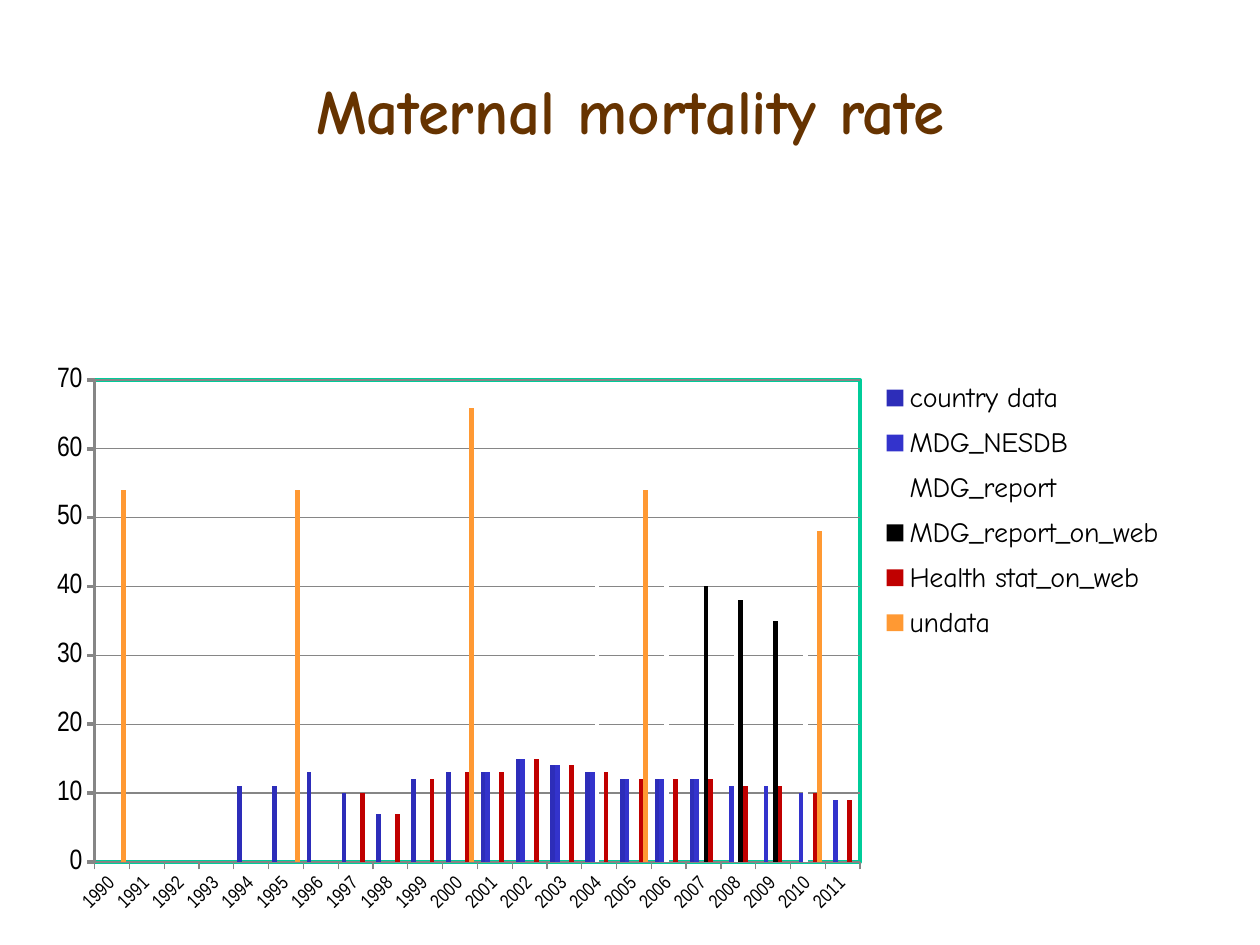
"""Build a slide charting maternal mortality rates from six sources."""
from dataclasses import dataclass

from lxml import etree
from pptx import Presentation
from pptx import util as u
from pptx.chart.data import CategoryChartData
from pptx.dml.color import RGBColor
from pptx.enum import chart as ch, text
from pptx.oxml import parse_xml
from pptx.oxml.ns import nsdecls, qn

SCALE = 914400 / 126
YEARS = range(1990, 2012)
COLORS = {"title": "663300", "ink": "000000", "grid": "868686", "frame": "00CC99",
          "plot": "FFFFFF", "country": "2D2DB9", "nesdb": "3333CC", "report": "FFFFFF",
          "web": "000000", "health": "C00000", "un": "FF9933"}


@dataclass
class Source:
    """One data source, its values running at a fixed step from a first year."""
    name: str
    color: str
    first: int
    rates: list[int]
    step: int = 1

    def by_year(self) -> list[int | None]:
        """Return one value or gap for every year."""
        known = {self.first + i * self.step: rate for i, rate in enumerate(self.rates)}
        return [known.get(year) for year in YEARS]


SOURCES = [
    Source("country data", "country", 1994,
           [11, 11, 13, 10, 7, 12, 13, 13, 15, 14, 13, 12, 12, 12]),
    Source("MDG_NESDB", "nesdb", 2001, [13, 15, 14, 13, 12, 12, 12, 11, 11, 10, 9]),
    Source("MDG_report", "report", 2004, [44, 42, 38, 32], 2),
    Source("MDG_report_on_web", "web", 2007, [40, 38, 35]),
    Source("Health stat_on_web", "health", 1997,
           [10, 7, 12, 13, 13, 15, 14, 13, 12, 12, 12, 11, 11, 10, 9]),
    Source("undata", "un", 1990, [54, 54, 66, 54, 48], 5),
]


def px(length: int) -> u.Emu:
    """Convert px to EMU."""
    return u.Emu(round(length * SCALE))


def rgb(key: str) -> RGBColor:
    """Look up a palette colour."""
    return RGBColor.from_string(COLORS[key])


def style_font(font, face: str, size: int, color: str = "ink", bold: bool = False) -> None:
    """Set a font's face, size, colour and weight."""
    font.name, font.size, font.bold = face, u.Pt(size), bold
    font.color.rgb = rgb(color)


def add_text(slide, words: str, left: int, top: int, width: int, height: int, *,
             face: str, size: int, color: str, bold: bool = False) -> None:
    """Add centred text in a box."""
    frame = slide.shapes.add_textbox(px(left), px(top), px(width), px(height)).text_frame
    frame.word_wrap = True
    frame.vertical_anchor = text.MSO_ANCHOR.MIDDLE
    paragraph = frame.paragraphs[0]
    paragraph.alignment = text.PP_ALIGN.CENTER
    run = paragraph.add_run()
    run.text = words
    style_font(run.font, face, size, color, bold)


def set_layout(parent, index: int, x: float, y: float, w: float, h: float,
               inner: bool = False) -> None:
    """Fix the place of a chart part as fractions of the chart."""
    for old in parent.findall(qn("c:layout")):
        parent.remove(old)
    target = '<c:layoutTarget val="inner"/>' if inner else ""
    modes = "".join(f'<c:{axis}Mode val="edge"/>' for axis in "xy")
    sizes = "".join(f'<c:{key} val="{val}"/>' for key, val in zip("xywh", (x, y, w, h)))
    parent.insert(index, parse_xml(
        f'<c:layout {nsdecls("c")}><c:manualLayout>{target}{modes}{sizes}'
        '</c:manualLayout></c:layout>'))


def frame_plot(plot_area) -> None:
    """Fill and outline the plot area."""
    props = etree.SubElement(plot_area, qn("c:spPr"))
    line = etree.Element(qn("a:ln"), w=str(u.Pt(2)))
    for parent, color in ((props, "plot"), (line, "frame")):
        fill = etree.SubElement(parent, qn("a:solidFill"))
        etree.SubElement(fill, qn("a:srgbClr"), val=COLORS[color])
    props.append(line)


def style_axis(axis, size: int, line_color: str, line_width: float) -> None:
    """Set an axis's ticks, labels and line."""
    axis.major_tick_mark = ch.XL_TICK_MARK.OUTSIDE
    axis.minor_tick_mark = ch.XL_TICK_MARK.NONE
    style_font(axis.tick_labels.font, "Arial Narrow", size)
    axis.format.line.color.rgb = rgb(line_color)
    axis.format.line.width = u.Pt(line_width)


def add_rates(slide, left: int, top: int, width: int, height: int) -> None:
    """Add the clustered columns of all sources."""
    data = CategoryChartData()
    data.categories = [str(year) for year in YEARS]
    for source in SOURCES:
        data.add_series(source.name, source.by_year())
    rates = slide.shapes.add_chart(ch.XL_CHART_TYPE.COLUMN_CLUSTERED, px(left), px(top),
                                   px(width), px(height), data).chart
    rates.has_title = False
    style_font(rates.font, "Times New Roman", 18)

    columns = rates.plots[0]
    columns.gap_width, columns.overlap, columns.vary_by_categories = 150, 0, False
    for source, series in zip(SOURCES, columns.series):
        series.invert_if_negative = False
        series.format.fill.solid()
        series.format.fill.fore_color.rgb = rgb(source.color)

    style_axis(rates.category_axis, 11, "grid", 0.75)
    label_body = rates.category_axis.tick_labels.font._element.getparent().getparent()
    rates.category_axis._element.find(qn("c:txPr")).find(qn("a:bodyPr")).set("rot", "-2700000")
    scale = rates.value_axis
    style_axis(scale, 16, "grid", 2)
    scale.minimum_scale, scale.maximum_scale, scale.major_unit = 0, 70, 10
    scale.has_major_gridlines = True
    scale.major_gridlines.format.line.color.rgb = rgb("grid")
    scale.major_gridlines.format.line.width = u.Pt(0.75)

    rates.has_legend = True
    rates.legend.position = ch.XL_LEGEND_POSITION.RIGHT
    rates.legend.include_in_layout = False
    style_font(rates.legend.font, "Comic Neue", 16)
    set_layout(rates.legend._element, 1, 0.73, 0.01, 0.26, 0.5)
    plot_area = rates._chartSpace.chart.plotArea
    set_layout(plot_area, 0, 0.06, 0.03, 0.66, 0.85, inner=True)
    frame_plot(plot_area)


def main() -> None:
    """Build and save the slide."""
    deck = Presentation()
    deck.slide_width, deck.slide_height = px(1260), px(945)
    slide = deck.slides.add_slide(deck.slide_layouts[6])
    add_rates(slide, 25, 363, 1160, 567)
    add_text(slide, "Maternal mortality rate", 95, 30, 1071, 158,
             face="Comic Neue", size=36, color="title", bold=True)
    deck.save("out.pptx")


if __name__ == "__main__":
    main()
